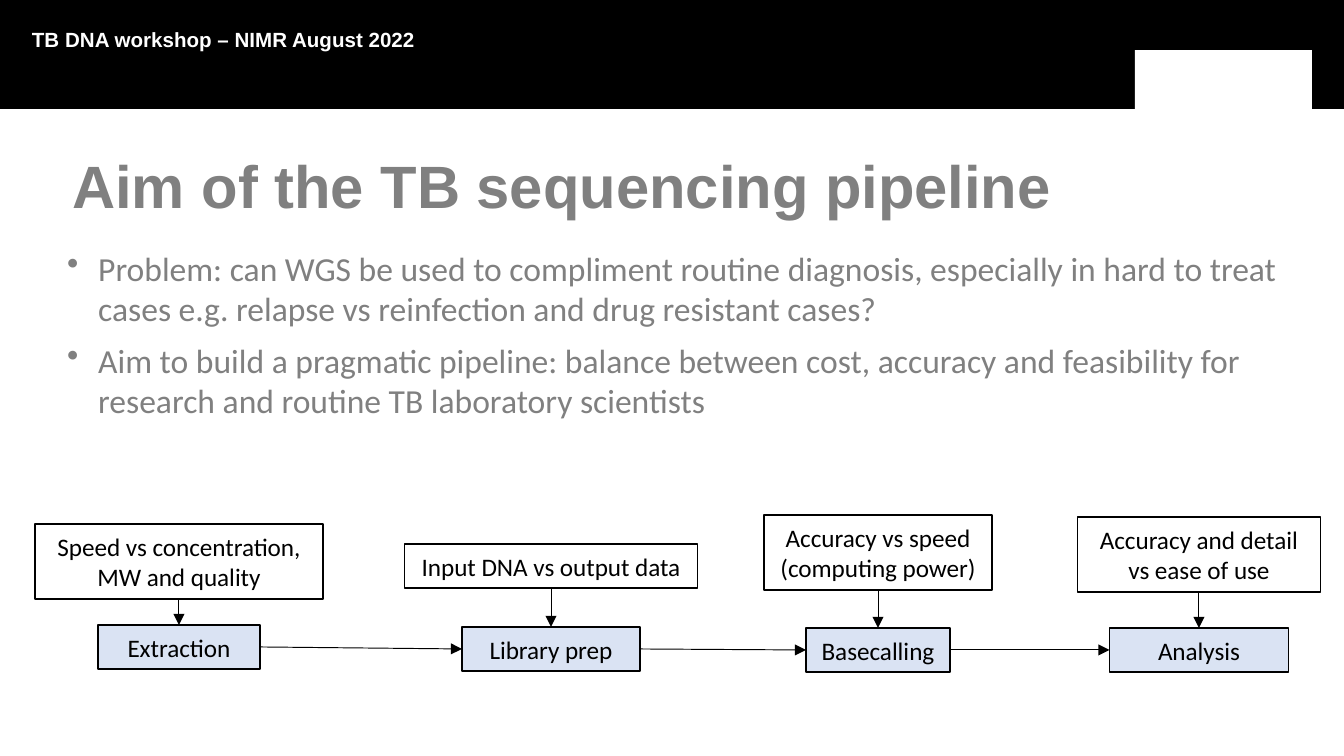
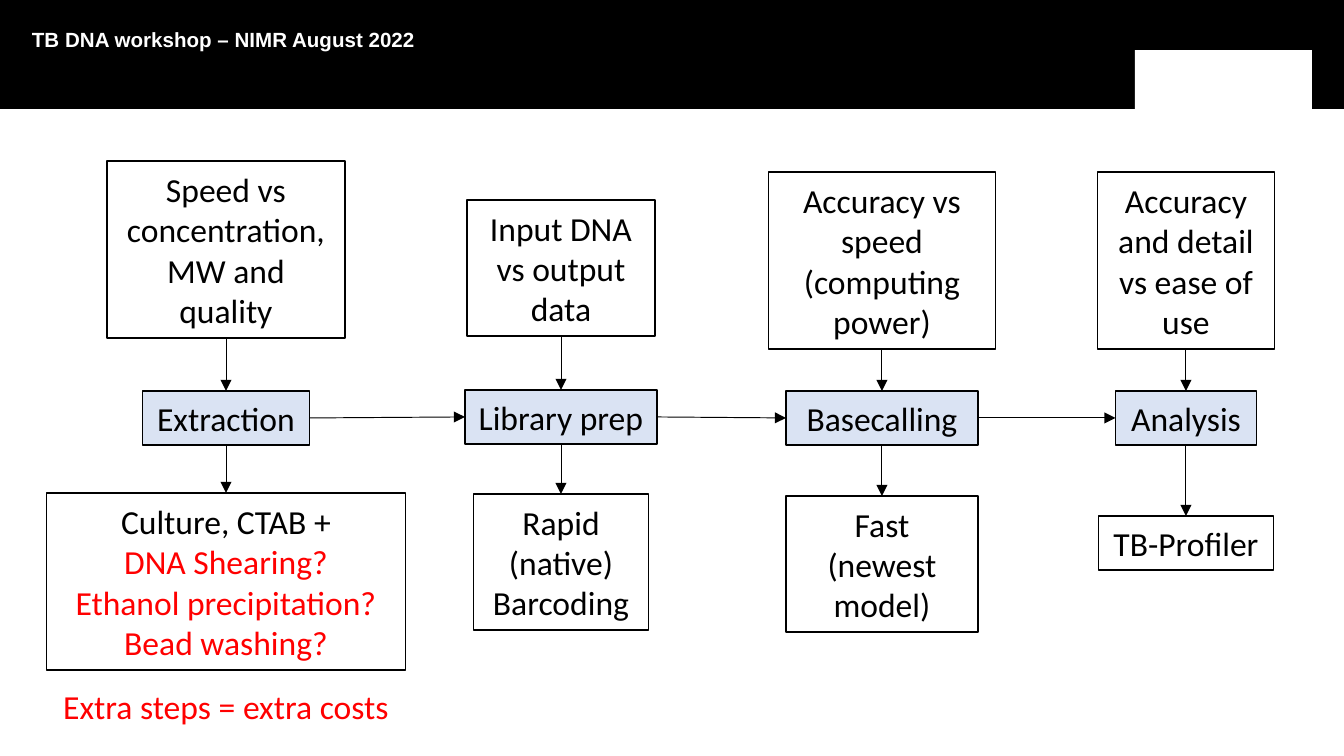
import dataclasses

import pptx
import pptx.dml.color
import pptx.enum.shapes
import pptx.enum.text
import pptx.oxml.ns
import pptx.util
from lxml import etree

PIXEL = 9144000 / 1344
ANCHOR = pptx.enum.text.MSO_ANCHOR
ALIGN = pptx.enum.text.PP_ALIGN
RECTANGLE = pptx.enum.shapes.MSO_SHAPE.RECTANGLE
STRAIGHT = pptx.enum.shapes.MSO_CONNECTOR.STRAIGHT
TOP, LEFT, BOTTOM, RIGHT = range(4)


@dataclasses.dataclass(frozen=True)
class Theme:
    black: str = "000000"
    white: str = "FFFFFF"
    grey: str = "808080"
    red: str = "FF0000"
    step: str = "DAE3F3"
    heading_font: str = "Arial"
    body_font: str = "Calibri"
    header_size: float = 11
    title_size: float = 32
    body_size: float = 18
    small_size: float = 13.5
    outline: float = 0.75
    arrow: float = 0.5


theme = Theme()


def emu(*pixels):
    return [pptx.util.Emu(round(value * PIXEL)) for value in pixels]


def write(box, paragraphs, size, face=theme.body_font, bold=False, bullet=False, frame=None, layout=None):
    frame_values = {"word_wrap": True, "vertical_anchor": ANCHOR.TOP}
    for name, value in (frame_values | (frame or {})).items():
        setattr(box.text_frame, name, value)
    for index, (text, color) in enumerate(paragraphs):
        para = box.text_frame.add_paragraph() if index else box.text_frame.paragraphs[0]
        for name, value in (layout or {}).items():
            setattr(para, name, value)
        if bullet:
            para.space_before = pptx.util.Pt(6 if index else 0)
            properties = para._p.get_or_add_pPr()
            indent = emu(31)[0]
            properties.set("marL", str(indent))
            properties.set("indent", str(-indent))
            etree.SubElement(properties, pptx.oxml.ns.qn("a:buChar"), char="•")
        span = para.add_run()
        span.text = text
        for name, value in {"name": face, "size": pptx.util.Pt(size), "bold": bold}.items():
            setattr(span.font, name, value)
        span.font.color.rgb = pptx.dml.color.RGBColor.from_string(color)


deck = pptx.Presentation()
deck.slide_width, deck.slide_height = emu(1344, 756)

aim_columns = [
    (179, [("Speed vs concentration, MW and quality", 2, 288, 524), ("Extraction", 1, 162, 625)]),
    (551, [("Input DNA vs output data", 1, 293, 544), ("Library prep", 1, 178, 627)]),
    (878, [("Accuracy vs speed (computing power)", 2, 228, 515), ("Basecalling", 1, 144, 628)]),
    (1199, [("Accuracy and detail vs ease of use", 2, 243, 517), ("Analysis", 1, 179, 628)]),
]
culture = [
    ("Culture, CTAB +", theme.black),
    ("DNA Shearing?", theme.red),
    ("Ethanol precipitation?", theme.red),
    ("Bead washing?", theme.red),
]
choice_columns = [
    (226, [("Speed vs concentration, MW and quality", 4, 238, 161), ("Extraction", 1, 167, 391), (culture, 4, 359, 493)]),
    (561, [("Input DNA vs output data", 3, 188, 200), ("Library prep", 1, 192, 390), ("Rapid (native) Barcoding", 3, 175, 494)]),
    (882, [("Accuracy vs speed (computing power)", 4, 227, 172), ("Basecalling", 1, 192, 391), ("Fast (newest model)", 3, 192, 496)]),
    (1186, [("Accuracy and detail vs ease of use", 4, 177, 172), ("Analysis", 1, 141, 391), ("TB-Profiler", 1, 175, 516)]),
]

pages = []
for columns, size, line_height in [(aim_columns, theme.small_size, 31), (choice_columns, theme.body_size, 41)]:
    page = deck.slides.add_slide(deck.slide_layouts[6])
    pages.append(page)

    for place, color in [((0, 0, 1344, 109), theme.black), ((1135, 50, 177, 59), theme.white)]:
        band = page.shapes.add_shape(RECTANGLE, *emu(*place))
        band.shadow.inherit = False
        band.fill.solid()
        band.fill.fore_color.rgb = pptx.dml.color.RGBColor.from_string(color)
        band.line.fill.background()

    header = page.shapes.add_textbox(*emu(32, 32, 806, 43))
    margins = {"margin_" + side: 0 for side in ("left", "top", "right", "bottom")}
    write(header, [("TB DNA workshop – NIMR August 2022", theme.white)], theme.header_size,
          theme.heading_font, True, frame=margins, layout={"line_spacing": 0.8})

    arrows = []
    previous_step = None
    for center, stack in columns:
        above = None
        for row, (content, lines, width, top) in enumerate(stack):
            is_step = row == 1
            place = emu(center - width / 2, top, width, 13 + lines * line_height)
            box = page.shapes.add_shape(RECTANGLE, *place)
            box.shadow.inherit = False
            if is_step:
                box.fill.solid()
                box.fill.fore_color.rgb = pptx.dml.color.RGBColor.from_string(theme.step)
            else:
                box.fill.background()
            box.line.color.rgb = pptx.dml.color.RGBColor.from_string(theme.black)
            box.line.width = pptx.util.Pt(theme.outline)
            paragraphs = [(content, theme.black)] if isinstance(content, str) else content
            write(box, paragraphs, size, frame={"word_wrap": not is_step, "vertical_anchor": ANCHOR.MIDDLE},
                  layout={"alignment": ALIGN.CENTER})
            if above is not None:
                arrows.append((above, BOTTOM, box, TOP))
            if is_step:
                if previous_step is not None:
                    arrows.append((previous_step, RIGHT, box, LEFT))
                previous_step = box
            above = box

    for start, start_side, end, end_side in arrows:
        arrow = page.shapes.add_connector(STRAIGHT, 0, 0, 0, 0)
        arrow.begin_connect(start, start_side)
        arrow.end_connect(end, end_side)
        arrow.line.color.rgb = pptx.dml.color.RGBColor.from_string(theme.black)
        arrow.line.width = pptx.util.Pt(theme.arrow)
        etree.SubElement(arrow.line._get_or_add_ln(), pptx.oxml.ns.qn("a:tailEnd"), type="triangle")
        etree.SubElement(arrow._element.spPr, pptx.oxml.ns.qn("a:effectLst"))

aim_page, choice_page = pages

title = aim_page.shapes.add_textbox(*emu(59, 147, 1241, 85))
write(title, [("Aim of the TB sequencing pipeline", theme.grey)], theme.title_size, theme.heading_font, True,
      frame={"vertical_anchor": ANCHOR.MIDDLE}, layout={"line_spacing": 0.9})

aims = aim_page.shapes.add_textbox(*emu(54, 241, 1250, 188))
write(aims, [
    ("Problem: can WGS be used to compliment routine diagnosis, especially in hard to treat cases "
     "e.g. relapse vs reinfection and drug resistant cases?", theme.grey),
    ("Aim to build a pragmatic pipeline: balance between cost, accuracy and feasibility for research "
     "and routine TB laboratory scientists", theme.grey),
], theme.body_size, bullet=True)

costs = choice_page.shapes.add_textbox(*emu(50, 679, 356, 54))
write(costs, [("Extra steps = extra costs", theme.red)], theme.body_size, frame={"word_wrap": False})

deck.save("out.pptx")
